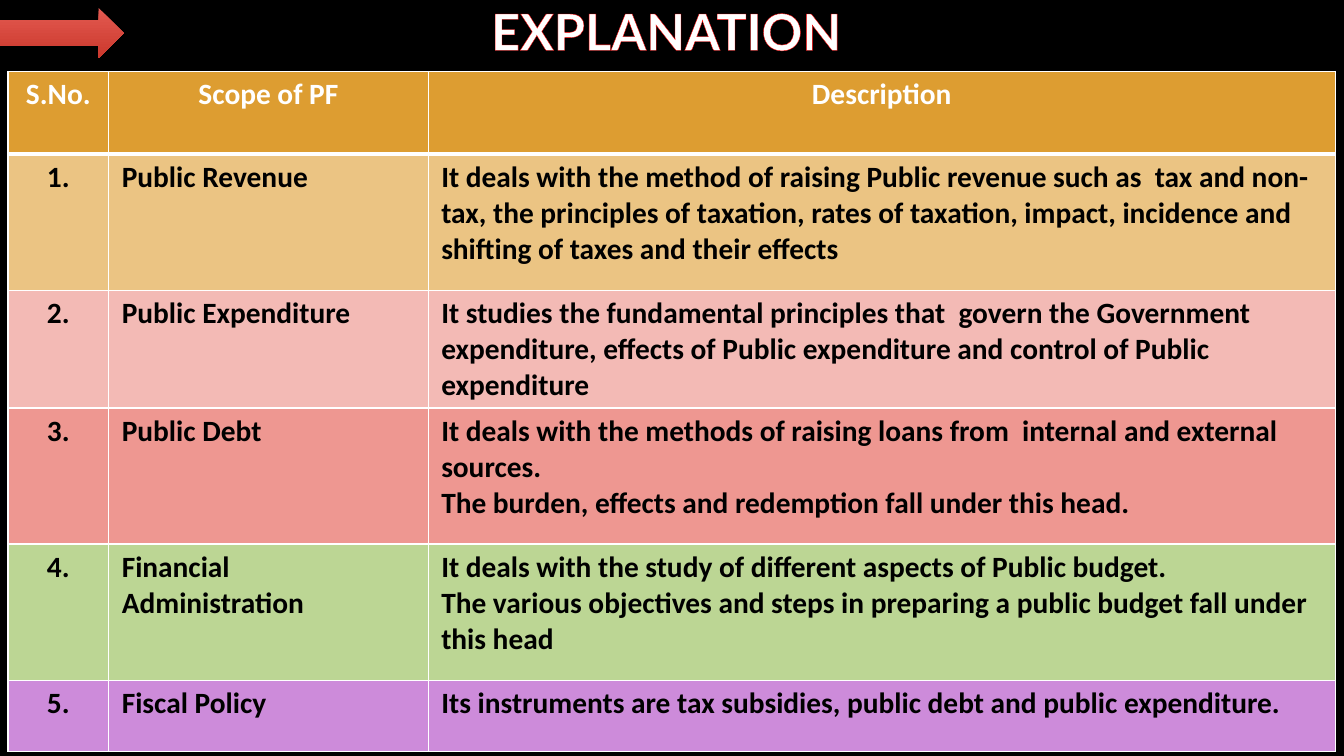
from lxml import etree
from pptx import Presentation
from pptx.dml.color import RGBColor
from pptx.enum.shapes import MSO_SHAPE
from pptx.enum.text import MSO_ANCHOR, PP_ALIGN
from pptx.oxml.ns import qn
from pptx.util import Cm, Pt

ARROW = MSO_SHAPE.RIGHT_ARROW
MIDDLE = MSO_ANCHOR.MIDDLE
LEFT, CENTER = PP_ALIGN.LEFT, PP_ALIGN.CENTER
WHITE, BLACK, RED = "FFFFFF", "000000", "FF0000"

TITLE = "EXPLANATION"
HEADS = ("S.No.", "Scope of PF", "Description")
SCOPES = [
    ("Public Revenue", "EBC483", 3.43, [
        "It deals with the method of raising Public revenue such as  tax and non-tax, "
        "the principles of taxation, rates of taxation, impact, incidence and shifting "
        "of taxes and their effects"]),
    ("Public Expenditure", "F3BAB5", 2.97, [
        "It studies the fundamental principles that  govern the Government expenditure, "
        "effects of Public expenditure and control of Public  expenditure"]),
    ("Public Debt", "EE9791", 3.43, [
        "It deals with the methods of raising loans from  internal and external sources.",
        "The burden, effects and redemption fall under this head."]),
    ("Financial Administration", "BCD694", 3.43, [
        "It deals with the study of different aspects of Public budget.",
        "The various objectives and steps in preparing a public budget fall under this head"]),
    ("Fiscal Policy", "CD8BDA", 1.8, [
        "Its instruments are tax subsidies, public debt and public expenditure."]),
]
WIDTHS = (2.54, 8.05, 22.86)
HEAD_FILL, HEAD_HIGH = "DD9D31", 2.08
SHADES = ("E35A51", "CB382C")


def tint(color):
    return RGBColor.from_string(color)


def write(frame, lines, size=21, font="Calibri", color=BLACK, align=LEFT):
    frame.word_wrap = True
    for i, line in enumerate(lines):
        para = frame.paragraphs[0] if i == 0 else frame.add_paragraph()
        para.alignment = align
        run = para.add_run()
        run.text = line
        run.font.size = Pt(size)
        run.font.name = font
        run.font.bold = True
        run.font.color.rgb = tint(color)


def stroke(tag, width, color):
    line = etree.Element(qn(tag), w=str(Pt(width)))
    fill = etree.SubElement(line, qn("a:solidFill"))
    etree.SubElement(fill, qn("a:srgbClr"), val=color)
    return line


def add_title(slide):
    box = slide.shapes.add_textbox(Cm(1.55), Cm(-0.38), Cm(30.48), Cm(2.29))
    frame = box.text_frame
    frame.vertical_anchor = MIDDLE
    write(frame, [TITLE], size=36, font="Lato", color=WHITE, align=CENTER)
    props = frame.paragraphs[0].runs[0].font._element
    props.insert(0, stroke("a:ln", 0.25, RED))


def add_grid(slide):
    rows = [(HEAD_FILL, HEAD_HIGH, [[head] for head in HEADS])]
    for num, (name, fill, high, lines) in enumerate(SCOPES, 1):
        rows.append((fill, high, [[f"{num}."], [name], lines]))
    total = sum(high for _, high, _ in rows)
    frame = slide.shapes.add_table(len(rows), len(WIDTHS), Cm(0.2), Cm(1.8),
                                   Cm(sum(WIDTHS)), Cm(total))
    table = frame.table
    for col, width in zip(table.columns, WIDTHS):
        col.width = Cm(width)
    for r, (fill, high, texts) in enumerate(rows):
        table.rows[r].height = Cm(high)
        edges = {"a:lnL": 1, "a:lnR": 1,
                 "a:lnT": 3 if r == 1 else 1, "a:lnB": 3 if r == 0 else 1}
        for c, lines in enumerate(texts):
            cell = table.cell(r, c)
            cell.margin_left = cell.margin_right = Cm(0.33)
            cell.margin_top = cell.margin_bottom = Cm(0.13)
            props = cell._tc.get_or_add_tcPr()
            for tag, width in edges.items():
                props.append(stroke(tag, width, WHITE))
            cell.fill.solid()
            cell.fill.fore_color.rgb = tint(fill)
            write(cell.text_frame, lines, color=WHITE if r == 0 else BLACK,
                  align=CENTER if r == 0 or c == 0 else LEFT)


def add_arrow(slide):
    arrow = slide.shapes.add_shape(ARROW, Cm(-0.05), Cm(0.2), Cm(3.17), Cm(1.27))
    arrow.shadow.inherit = False
    arrow.line.fill.background()
    arrow.fill.gradient()
    arrow.fill.gradient_angle = 270
    for stop, shade in zip(arrow.fill.gradient_stops, SHADES):
        stop.color.rgb = tint(shade)


def main():
    deck = Presentation()
    deck.slide_width, deck.slide_height = Cm(33.87), Cm(19.05)
    slide = deck.slides.add_slide(deck.slide_layouts[6])
    back = slide.background.fill
    back.solid()
    back.fore_color.rgb = tint(BLACK)
    add_title(slide)
    add_grid(slide)
    add_arrow(slide)
    deck.save("out.pptx")


if __name__ == "__main__":
    main()
